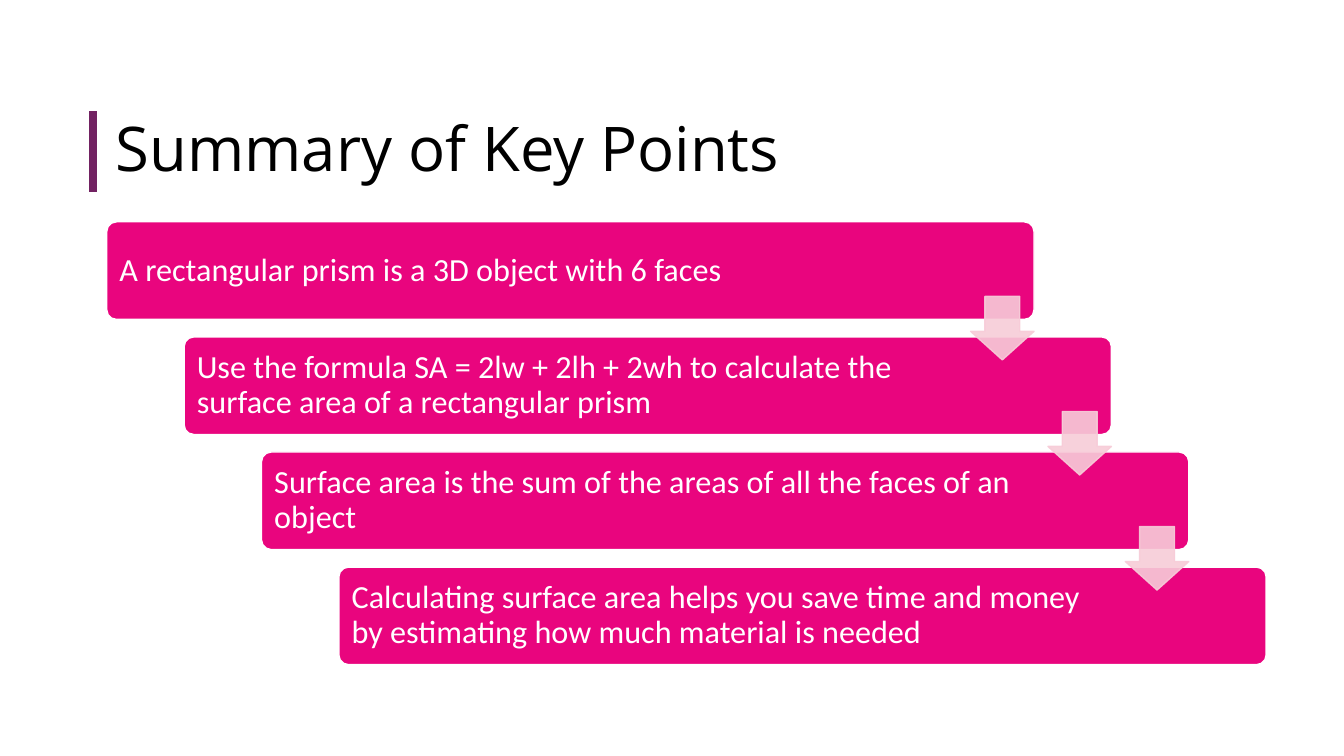
from lxml import etree
from pptx import Presentation
from pptx.dml.color import RGBColor
from pptx.enum.shapes import MSO_CONNECTOR, MSO_SHAPE
from pptx.enum.text import MSO_ANCHOR, PP_ALIGN
from pptx.oxml.ns import qn
from pptx.util import Cm, Pt

ROUNDED, DOWN_ARROW = MSO_SHAPE.ROUNDED_RECTANGLE, MSO_SHAPE.DOWN_ARROW
STRAIGHT = MSO_CONNECTOR.STRAIGHT
MIDDLE, LEFT = MSO_ANCHOR.MIDDLE, PP_ALIGN.LEFT
BLACK, WHITE, PURPLE, PINK, PALE = "000000", "FFFFFF", "722262", "E9057E", "F7CCD8"
STEP_X, STEP_Y = 1.95, 2.9
POINTS = [
    "A rectangular prism is a 3D object with 6 faces",
    "Use the formula SA = 2lw + 2lh + 2wh to calculate the surface area of a rectangular prism",
    "Surface area is the sum of the areas of all the faces of an object",
    "Calculating surface area helps you save time and money by estimating how much material is needed",
]


def rgb(value):
    """Turn a hex string into a colour."""
    return RGBColor.from_string(value)


def write(sp, text, font, size, color):
    """Fill a shape with one left-aligned, vertically centred paragraph."""
    tf = sp.text_frame
    tf.word_wrap = True
    tf.vertical_anchor = MIDDLE
    p = tf.paragraphs[0]
    p.text = text
    p.alignment = LEFT
    p.line_spacing = 0.9
    p.font.name, p.font.size = font, Pt(size)
    p.font.color.rgb = rgb(color)


def add_block(s, kind, x, y, w, h, fill, line, adjustments):
    """Add a filled preset shape with a thin outline."""
    sp = s.shapes.add_shape(kind, Cm(x), Cm(y), Cm(w), Cm(h))
    sp.shadow.inherit = False
    for i, value in enumerate(adjustments):
        sp.adjustments[i] = value
    sp.fill.solid()
    sp.fill.fore_color.rgb = rgb(fill)
    sp.line.color.rgb = rgb(line)
    sp.line.width = Pt(1)
    return sp


def add_title(s, text):
    """Add the title with its vertical accent bar."""
    bar = s.shapes.add_connector(STRAIGHT, Cm(2.34), Cm(2.8), Cm(2.34), Cm(4.83))
    bar.line.color.rgb = rgb(PURPLE)
    bar.line.width = Pt(6)
    etree.SubElement(bar._element.spPr, qn("a:effectLst"))
    box = s.shapes.add_textbox(Cm(2.67), Cm(2.8), Cm(29.2), Cm(2.03))
    write(box, text, "Open Sans", 44, BLACK)


def add_point(s, index, text):
    """Add one step of the staircase."""
    sp = add_block(s, ROUNDED, 2.69 + index * STEP_X, 5.59 + index * STEP_Y,
                   23.37, 2.46, PINK, WHITE, [0.1])
    write(sp, text, "Calibri", 23, WHITE)
    sp.text_frame.margin_left = Cm(0.25)
    sp.text_frame.margin_right = Cm(3.78)


def add_arrow(s, index):
    """Add the translucent arrow leading to the next step."""
    sp = add_block(s, DOWN_ARROW, 24.46 + index * STEP_X, 7.47 + index * STEP_Y,
                   1.6, 1.6, PALE, PALE, [0.55, 0.45])
    for color in sp._element.spPr.iter(qn("a:srgbClr")):
        etree.SubElement(color, qn("a:alpha"), val="90000")


def main():
    """Build the summary slide."""
    prs = Presentation()
    prs.slide_width, prs.slide_height = Cm(33.87), Cm(19.05)
    s = prs.slides.add_slide(prs.slide_layouts[6])
    add_title(s, "Summary of Key Points")
    for i, text in enumerate(POINTS):
        add_point(s, i, text)
    for i in range(len(POINTS) - 1):
        add_arrow(s, i)
    prs.save("out.pptx")


if __name__ == "__main__":
    main()
